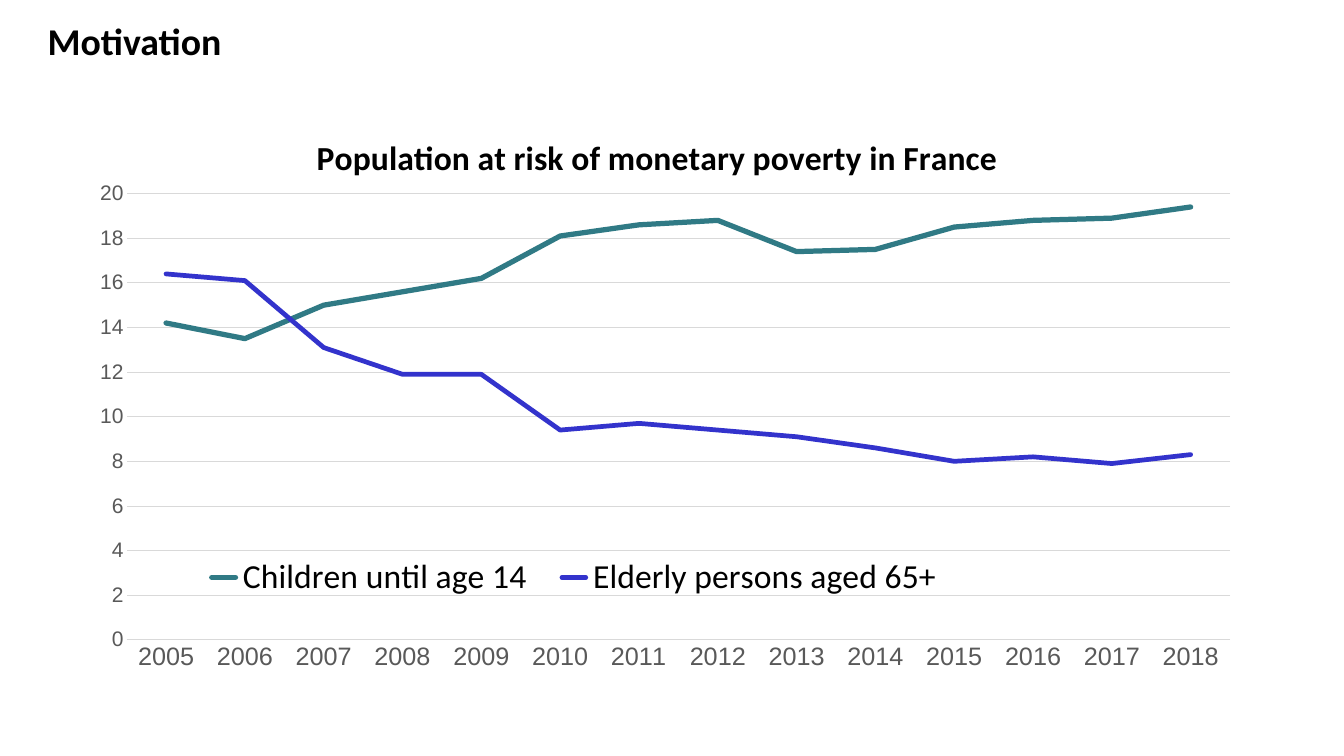
from lxml import etree
from pptx import Presentation
from pptx import util as u
from pptx.chart.data import CategoryChartData
from pptx.dml.color import RGBColor
from pptx.enum import chart as ch, text
from pptx.oxml.ns import qn

HEADING = "Motivation"
CHART_HEADING = "Population at risk of monetary poverty in France"
YEARS = [str(year) for year in range(2005, 2019)]
GROUPS = [
    ("Children until age 14", "children", 5,
     [14.2, 13.5, 15, 15.6, 16.2, 18.1, 18.6, 18.8, 17.4, 17.5, 18.5, 18.8, 18.9, 19.4]),
    ("Elderly persons aged 65+", "elderly", 4.5,
     [16.4, 16.1, 13.1, 11.9, 11.9, 9.4, 9.7, 9.4, 9.1, 8.6, 8, 8.2, 7.9, 8.3]),
]
COLORS = {"text": "000000", "axis": "595959", "grid": "D9D9D9",
          "children": "307A85", "elderly": "3333CC"}
LAYOUTS = [
    ("c:title", 1, {"x": 0.22, "y": 0.03}),
    ("c:plotArea", 0, {"x": 0.07, "y": 0.14, "w": 0.9, "h": 0.75}),
    ("c:legend", 1, {"x": 0.12, "y": 0.74, "w": 0.63, "h": 0.09}),
]


def style(font, size, color, name, bold=False):
    font.size, font.name, font.bold = u.Pt(size), name, bold
    font.color.rgb = RGBColor.from_string(COLORS[color])


def stroke(line, color, width):
    line.color.rgb = RGBColor.from_string(COLORS[color])
    line.width = u.Pt(width)


def place(part, index, shares):
    for old in part.findall(qn("c:layout")):
        part.remove(old)
    layout = etree.Element(qn("c:layout"))
    manual = etree.SubElement(layout, qn("c:manualLayout"))
    if part.tag == qn("c:plotArea"):
        etree.SubElement(manual, qn("c:layoutTarget")).set("val", "inner")
    for key in "xy":
        etree.SubElement(manual, qn(f"c:{key}Mode")).set("val", "edge")
    for key, share in shares.items():
        etree.SubElement(manual, qn(f"c:{key}")).set("val", str(share))
    part.insert(index, layout)


def add_heading(slide, width):
    heading = slide.shapes.title
    heading.left, heading.top, heading.width, heading.height = 0, 0, width, u.Inches(1.06)
    frame = heading.text_frame
    frame.text = HEADING
    frame.margin_left = u.Inches(0.63)
    frame.vertical_anchor = text.MSO_ANCHOR.MIDDLE
    frame.paragraphs[0].alignment = text.PP_ALIGN.LEFT
    style(frame.paragraphs[0].runs[0].font, 36, "text", "Calibri", True)


def add_poverty_chart(slide):
    data = CategoryChartData()
    data.categories = YEARS
    for name, _, _, rates in GROUPS:
        data.add_series(name, rates)
    chart = slide.shapes.add_chart(
        ch.XL_CHART_TYPE.LINE, u.Inches(0.54), u.Inches(1.46),
        u.Inches(16.22), u.Inches(7.87), data).chart
    style(chart.font, 10, "text", "Arial")

    chart.has_title = True
    caption = chart.chart_title.text_frame
    caption.text = CHART_HEADING
    style(caption.paragraphs[0].runs[0].font, 32, "text", "Calibri", True)

    chart.has_legend = True
    chart.legend.position = ch.XL_LEGEND_POSITION.BOTTOM
    chart.legend.include_in_layout = False
    style(chart.legend.font, 32, "text", "Calibri")

    years, rate = chart.category_axis, chart.value_axis
    for axis, size in ((years, 24), (rate, 20)):
        axis.major_tick_mark = axis.minor_tick_mark = ch.XL_TICK_MARK.NONE
        style(axis.tick_labels.font, size, "axis", "Arial")
    stroke(years.format.line, "grid", 0.75)
    rate.format.line.fill.background()
    rate.minimum_scale, rate.maximum_scale, rate.major_unit = 0, 20, 2
    stroke(rate.major_gridlines.format.line, "grid", 0.75)

    plot = chart.plots[0]
    plot.vary_by_categories = False
    for group, (_, color, width, _) in zip(plot.series, GROUPS):
        group.smooth = False
        group.marker.style = ch.XL_MARKER_STYLE.NONE
        stroke(group.format.line, color, width)
        group._element.find(qn("c:spPr")).find(qn("a:ln")).set("cap", "rnd")

    for tag, index, shares in LAYOUTS:
        place(chart._chartSpace.chart.find(qn(tag)), index, shares)


def main():
    deck = Presentation()
    deck.slide_width, deck.slide_height = u.Inches(17.78), u.Inches(10)
    slide = deck.slides.add_slide(deck.slide_layouts[5])
    add_heading(slide, deck.slide_width)
    add_poverty_chart(slide)
    deck.save("out.pptx")


if __name__ == "__main__":
    main()
